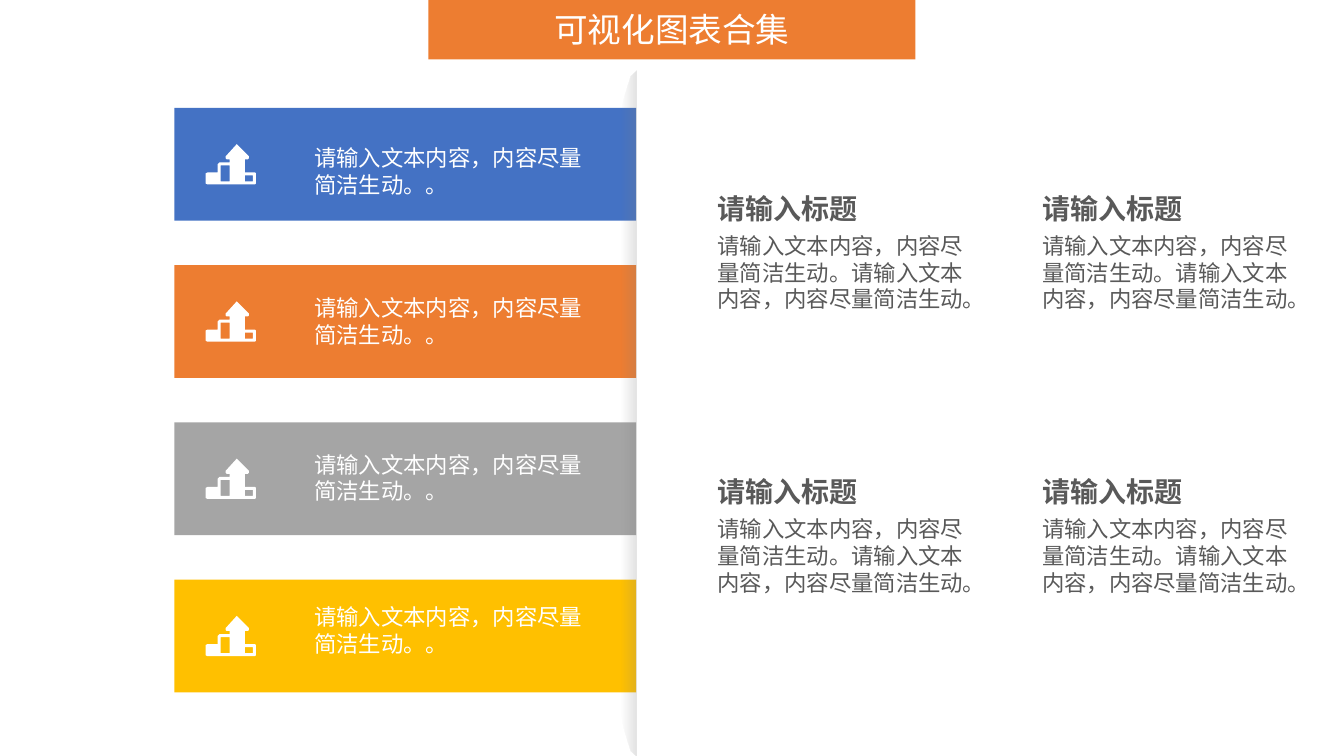
"""Build a slide with four colour bars beside a grid of four notes."""
from dataclasses import dataclass

from lxml.etree import SubElement
from pptx import Presentation
from pptx.dml.color import RGBColor
from pptx.enum.shapes import MSO_SHAPE
from pptx.enum.text import MSO_AUTO_SIZE, PP_ALIGN
from pptx.oxml.ns import qn
from pptx.util import Emu, Inches, Pt

WIDE, HIGH = Inches(13.333), Inches(7.5)
HUES = {
    "blue": "4472C4", "orange": "ED7D31", "gray": "A5A5A5", "gold": "FFC000",
    "white": "FFFFFF", "ink": "595959", "shade": "808080",
}
HAN = "Noto Sans CJK SC"
LINE = "请输入文本内容，内容尽量简洁生动。"
ARROW = [
    [(49, 28), (39, 28), (39, 15), (42, 15), (43, 14), (43, 12), (32, 1),
     (31, 0), (30, 1), (20, 12), (20, 14), (21, 15), (24, 15), (24, 18),
     (14, 18), (12, 20), (12, 28), (2, 28), (0, 29), (0, 39), (2, 40),
     (49, 40), (50, 39), (50, 29)],
    [(24, 37), (15, 37), (15, 21), (24, 21)],
    [(47, 37), (39, 37), (39, 31), (47, 31)],
]


@dataclass
class Box:
    """A frame in percent of the slide's width and height."""
    x: float
    y: float
    w: float
    h: float

    def frame(self) -> tuple:
        """Return left, top, width and height as lengths."""
        return (Emu(int(WIDE * self.x / 100)), Emu(int(HIGH * self.y / 100)),
                Emu(int(WIDE * self.w / 100)), Emu(int(HIGH * self.h / 100)))


@dataclass
class Bar:
    """A colour bar and the top of its text."""
    hue: str
    top: float


BARS = [Bar("blue", 18.13), Bar("orange", 38), Bar("gray", 58.67), Bar("gold", 78.8)]


def paint(shape, hue: str) -> None:
    """Give a shape a flat fill without line or shadow."""
    shape.fill.solid()
    shape.fill.fore_color.rgb = RGBColor.from_string(HUES[hue])
    shape.line.fill.background()
    shape.shadow.inherit = False


def block(slide, box: Box, hue: str) -> None:
    """Draw a filled rectangle."""
    paint(slide.shapes.add_shape(MSO_SHAPE.RECTANGLE, *box.frame()), hue)


def write(slide, box: Box, text: str, *, size: int = 16, hue: str = "ink",
          font: str = "Arial", bold: bool = False, align=PP_ALIGN.LEFT) -> None:
    """Place a text box with one styled paragraph."""
    body = slide.shapes.add_textbox(*box.frame()).text_frame
    body.word_wrap = True
    body.auto_size = MSO_AUTO_SIZE.SHAPE_TO_FIT_TEXT
    body.margin_top = Inches(0.07)
    para = body.paragraphs[0]
    para.alignment = align
    para.line_spacing = Pt(size * 1.2)
    run = para.add_run()
    run.text = text
    run.font.size, run.font.bold, run.font.name = Pt(size), bold, font
    run.font.color.rgb = RGBColor.from_string(HUES[hue])
    SubElement(run._r.get_or_add_rPr(), qn("a:ea"), typeface=HAN)


def trace(slide, box: Box, loops: list, cols: int, rows: int, hue: str):
    """Draw closed loops given on a grid of cols by rows in the box."""
    left, top, wide, high = box.frame()
    first, *rest = loops
    pen = slide.shapes.build_freeform(*first[0], scale=(wide / cols, high / rows))
    pen.add_line_segments(first[1:], close=True)
    for loop in rest:
        pen.move_to(*loop[0])
        pen.add_line_segments(loop[1:], close=True)
    shape = pen.convert_to_shape(left, top)
    paint(shape, hue)
    return shape


def curve(a: tuple, b: tuple, c: tuple, d: tuple, steps: int = 12) -> list:
    """Sample a cubic curve from a to d."""
    return [tuple((1 - t) ** 3 * p + 3 * t * (1 - t) ** 2 * q
                  + 3 * t * t * (1 - t) * r + t ** 3 * s
                  for p, q, r, s in zip(a, b, c, d))
            for t in (i / steps for i in range(steps + 1))]


def fade(shape, hue: str, stops: list) -> None:
    """Fill a shape from left to right with stops of place and opacity."""
    shape.fill.gradient()
    shape.fill.gradient_angle = 0
    ramp = shape._element.spPr.find(".//" + qn("a:gsLst"))
    for old in list(ramp):
        ramp.remove(old)
    for place, alpha in stops:
        stop = SubElement(ramp, qn("a:gs"), pos=str(place * 1000))
        tint = SubElement(stop, qn("a:srgbClr"), val=HUES[hue])
        SubElement(tint, qn("a:alpha"), val=str(alpha * 1000))


def main() -> None:
    """Draw the slide and save it."""
    deck = Presentation()
    deck.slide_width, deck.slide_height = WIDE, HIGH
    slide = deck.slides.add_slide(deck.slide_layouts[6])

    block(slide, Box(31.88, -0.4, 36.23, 8.27), "orange")
    write(slide, Box(34.35, 0.27, 31.28, 6.67), "可视化图表合集",
          size=24, hue="white", font=HAN, align=PP_ALIGN.CENTER)

    tops = [14.27 + 20.8 * i for i in range(len(BARS))]
    for bar, top in zip(BARS, tops):
        block(slide, Box(12.98, top, 34.35, 14.93), bar.hue)

    edge = [(30, 0), (30, 680),
            *curve((24, 674), (10, 642), (0, 505), (0, 340)),
            *curve((0, 340), (0, 175), (10, 38), (24, 6))]
    fold = trace(slide, Box(45.08, 9.33, 2.25, 90.67), [edge], 30, 680, "shade")
    fade(fold, "shade", [(0, 0), (50, 0), (100, 23)])

    for bar, top in zip(BARS, tops):
        trace(slide, Box(15.3, top + 4.8, 3.75, 5.33), ARROW, 50, 40, "white")
        write(slide, Box(22.65, bar.top, 22.65, 12.13), LINE + "。", hue="white")

    for row in range(2):
        for col in range(2):
            x, y = 52.65 + 24.15 * col, 24.4 + 37.47 * row
            write(slide, Box(x, y, 12.4, 5.87), "请输入标题",
                  size=20, font=HAN, bold=True)
            write(slide, Box(x, y + 5.33, 20.48, 16.13), LINE * 2)

    deck.save("out.pptx")


if __name__ == "__main__":
    main()
